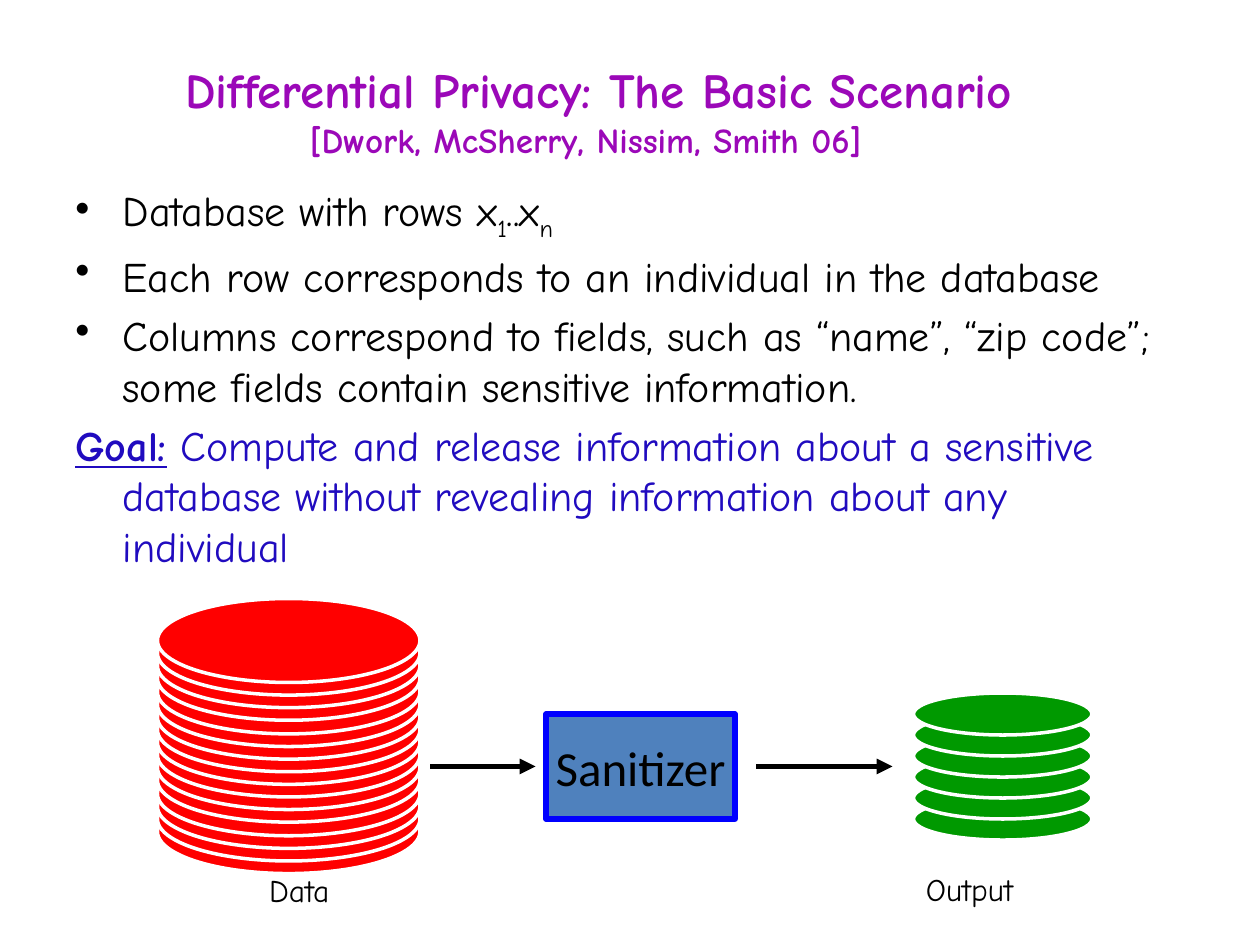
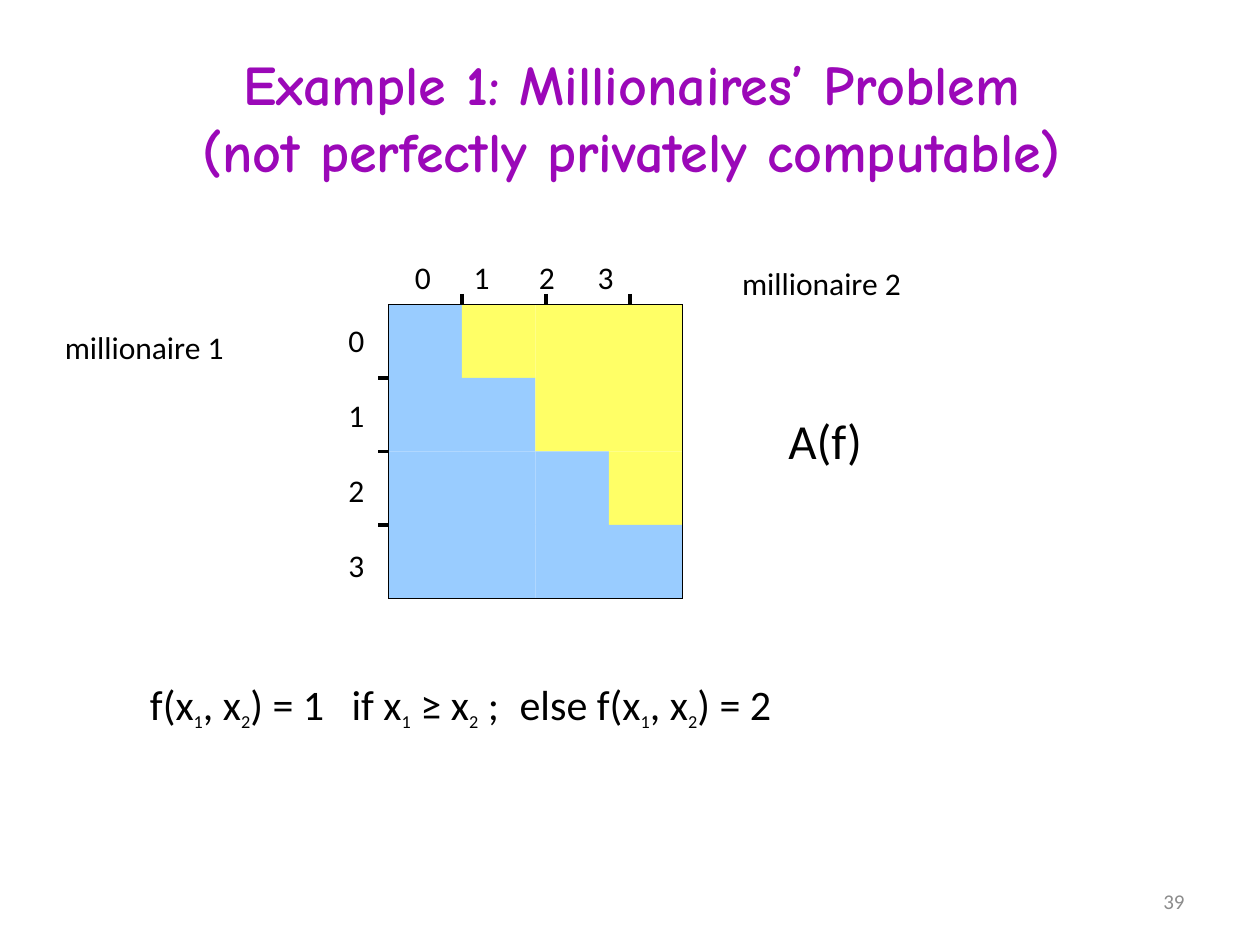
import pptx
import pptx.dml.color
import pptx.enum.shapes
import pptx.enum.text
import pptx.oxml.ns
import pptx.util
from lxml import etree

PX = 7620  # EMU per px, 120 px to the inch
COLORS = {"title": "9B08B8", "text": "000000", "goal": "200BBF", "number": "8C8C8C",
          "output": "009900", "data": "FF0000", "white": "FFFFFF",
          "box": "4F81BD", "box line": "0000FF", "one": "99CCFF", "two": "FFFF66"}
SHAPE = pptx.enum.shapes.MSO_SHAPE
ALIGN = pptx.enum.text.PP_ALIGN
ANCHOR = pptx.enum.text.MSO_ANCHOR
RGB = pptx.dml.color.RGBColor.from_string
Pt = pptx.util.Pt
qn = pptx.oxml.ns.qn

COMIC = {"name": "Comic Neue", "color": "text"}
CALIBRI = {"name": "Calibri", "color": "text", "size": 18}
TITLE = {"name": "Comic Neue", "color": "title", "bold": True}
SUB = {"baseline": -25000}


def add_box(shapes, box, paras=(), fmt=CALIBRI, kind=None, fill=None, line=None, width=0,
            align=ALIGN.LEFT, anchor=ANCHOR.TOP, before=0, wrap=True):
    """Add a text box, or a shape of the given kind; a paragraph is a list of (text, format)."""
    box = [v * PX for v in box]
    if kind is None:
        sp = shapes.add_textbox(*box)
    else:
        sp = shapes.add_shape(kind, *box)
        sp.shadow.inherit = False
        sp.fill.solid()
        sp.fill.fore_color.rgb = RGB(COLORS[fill])
        if line:
            sp.line.color.rgb = RGB(COLORS[line])
            sp.line.width = Pt(width)
        else:
            sp.line.fill.background()
    tf = sp.text_frame
    tf.word_wrap = wrap
    tf.vertical_anchor = anchor
    for i, para in enumerate(paras):
        p = tf.add_paragraph() if i else tf.paragraphs[0]
        p.alignment = align
        p.space_before = Pt(before if i else 0)
        for text, extra in para:
            r = p.add_run()
            r.text = text
            for key, value in {**fmt, **extra}.items():
                if key == "color":
                    r.font.color.rgb = RGB(COLORS[value])
                elif key == "baseline":
                    r.font._element.set("baseline", str(value))
                else:
                    setattr(r.font, key, Pt(value) if key == "size" else value)
    return sp


def add_line(shapes, ends, width, arrow=False):
    cx = shapes.add_connector(pptx.enum.shapes.MSO_CONNECTOR.STRAIGHT, *[v * PX for v in ends])
    cx.line.color.rgb = RGB(COLORS["text"])
    cx.line.width = Pt(width)
    if arrow:
        etree.SubElement(cx.line._get_or_add_ln(), qn("a:tailEnd"), type="triangle")
    etree.SubElement(cx._element.spPr, qn("a:effectLst"))


prs = pptx.Presentation()
prs.slide_width, prs.slide_height = 1200 * PX, 900 * PX
blank = prs.slide_layouts[6]
middle = {"align": ALIGN.CENTER, "anchor": ANCHOR.MIDDLE}

# Slide 1: the basic scenario
shapes = prs.slides.add_slide(blank).shapes
sp = add_box(shapes, (30, 30, 1080, 150),
             [[("Differential Privacy: The Basic Scenario", {})],
              [("[Dwork, McSherry, Nissim, Smith 06]", {"size": 20})]],
             {**TITLE, "size": 28}, **middle)
sp.text_frame.paragraphs[1]._p.get_or_add_pPr().set("marR", str(24 * PX))

body = [
    [("Database with rows x", {}), ("1", SUB), ("..x", {}), ("n", SUB)],
    [("Each row corresponds to an individual in the database", {})],
    [("Columns correspond to fields, such as “name”, “zip code”; "
      "some fields contain sensitive information.", {})],
    [("Goal:", {"color": "goal", "bold": True, "underline": True}),
     (" Compute and release information about a sensitive database without "
      "revealing information about any individual", {"color": "goal"})],
]
sp = add_box(shapes, (60, 170, 1080, 634), body, {**COMIC, "size": 24}, before=5)
for i, p in enumerate(sp.text_frame.paragraphs):
    pPr = p._p.get_or_add_pPr()
    pPr.set("marL", str(45 * PX))
    pPr.set("indent", str(-45 * PX))
    if i < 3:
        etree.SubElement(pPr, qn("a:buChar"), char="•")

# Each stack of discs: colour, left, top, width, disc height, rise from last to first, count
for color, x, y, w, h, rise, count in (("output", 870, 660, 170, 40, 100, 6),
                                       ("data", 150, 570, 250, 80, 182, 16)):
    stack = shapes.add_group_shape().shapes
    for i in reversed(range(count)):
        add_box(stack, (x, y + round(i * rise / (count - 1)), w, h),
                kind=SHAPE.OVAL, fill=color, line="white", width=2)

add_box(shapes, (520, 680, 180, 100), [[("Sanitizer", {})]], {**CALIBRI, "size": 28},
        SHAPE.RECTANGLE, "box", "box line", 3, wrap=False, **middle)
for start, end in ((410, 510), (720, 850)):
    add_line(shapes, (start, 730, end, 730), 3, arrow=True)
for label, box, align in (("Output", (870, 823, 270, 77), ALIGN.LEFT),
                          ("Data", (130, 824, 310, 76), ALIGN.CENTER)):
    add_box(shapes, box, [[(label, {})]], {**COMIC, "size": 18}, align=align)

# Slide 2: the millionaires' problem
shapes = prs.slides.add_slide(blank).shapes
add_box(shapes, (860, 834, 280, 48), [[("39", {})]], {**CALIBRI, "size": 12, "color": "number"},
        align=ALIGN.RIGHT, anchor=ANCHOR.MIDDLE)
add_box(shapes, (30, 36, 1144, 150),
        [[("Example 1: Millionaires’ Problem", {})],
         [("(not perfectly privately computable)", {})]],
        {**TITLE, "size": 32}, **middle)

left, top, cell, n = 370, 290, 70, 4
right, bottom = left + n * cell, top + n * cell
for col in range(n):
    for row in range(n):
        add_box(shapes, (left + col * cell, top + row * cell, cell, cell),
                kind=SHAPE.RECTANGLE, fill="one" if row >= col else "two")
for i in range(1, n):
    x, y = 360 + 80 * i, top + cell * i
    add_line(shapes, (x, top - 10, x, top), 2.25)
    add_line(shapes, (left - 10, y, left, y), 2.25)
for ends in ((left, top, right, top), (left, bottom, right, bottom),
             (left, top, left, bottom), (right, top, right, bottom)):
    add_line(shapes, ends, 1)

add_box(shapes, (320, 300, 40, 264), [[(str(i), {})] for i in range(n)], before=21.3)
columns = add_box(shapes, (370, 240, 300, 48), [[("\t0\t1\t2\t3", {})]])
for label, box, size in (("millionaire 1", (50, 307, 240, 48), 18),
                         ("millionaire 2", (695, 246, 240, 48), 18),
                         ("A(f)", (739, 385, 179, 68), 28)):
    add_box(shapes, box, [[(label, {})]], {**CALIBRI, "size": size})

pieces = "f(x_1_, x_2_) = 1\tif x_1_ ≥ x_2_ ;\telse f(x_1_, x_2_) = 2".split("_")
formula = add_box(shapes, (131, 640, 853, 60),
                  [[(s, {**SUB, "size": 18} if i % 2 else {}) for i, s in enumerate(pieces)]],
                  {**CALIBRI, "size": 24})
for sp, stops, algn in ((columns, (21, 77, 139, 195), "ctr"), (formula, (192, 352), "l")):
    tabs = etree.SubElement(sp.text_frame.paragraphs[0]._p.get_or_add_pPr(), qn("a:tabLst"))
    for stop in stops:
        etree.SubElement(tabs, qn("a:tab"), pos=str(stop * PX), algn=algn)

prs.save("out.pptx")
